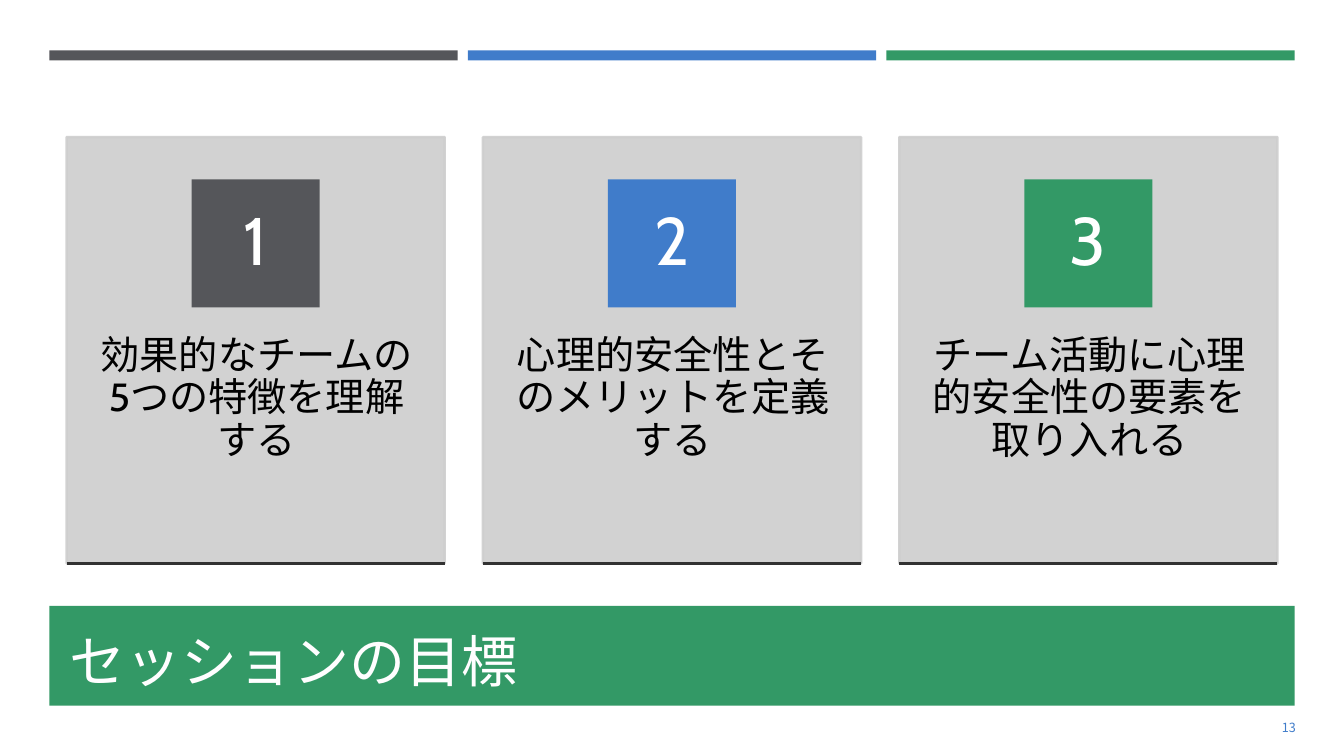
from dataclasses import dataclass

from lxml.etree import SubElement
from pptx import Presentation
from pptx.dml.color import RGBColor
from pptx.enum.shapes import MSO_CONNECTOR, MSO_SHAPE
from pptx.enum.text import MSO_ANCHOR, PP_ALIGN
from pptx.oxml.ns import qn
from pptx.shapes.autoshape import Shape
from pptx.slide import Slide
from pptx.util import Inches, Pt

COLORS = {
    "gray": "55565A",
    "blue": "407CCA",
    "green": "339966",
    "card": "CECECE",
    "rule": "323232",
    "black": "000000",
    "white": "FFFFFF",
    "title": "FFFEFF",
}
JAPANESE = "Noto Sans CJK JP"
LATIN = "Cabin"


@dataclass(frozen=True)
class Goal:
    number: str
    text: str
    color: str


@dataclass(frozen=True)
class Box:
    left: float
    top: float
    width: float
    height: float

    def lengths(self) -> tuple:
        return tuple(Inches(v) for v in (self.left, self.top, self.width, self.height))


@dataclass(frozen=True)
class TextStyle:
    size: float
    color: str
    font: str
    frame: dict
    paragraph: dict


GOALS = [
    Goal("1", "効果的なチームの5つの特徴を理解する", "gray"),
    Goal("2", "心理的安全性とそのメリットを定義する", "blue"),
    Goal("3", "チーム活動に心理的安全性の要素を取り入れる", "green"),
]

CENTERED = {"alignment": PP_ALIGN.CENTER, "line_spacing": 0.9}
MIDDLE = {"word_wrap": True, "vertical_anchor": MSO_ANCHOR.MIDDLE}
TITLE = TextStyle(40, "title", JAPANESE, MIDDLE, {"alignment": PP_ALIGN.LEFT})
PAGE_NUMBER = TextStyle(9, "blue", JAPANESE, MIDDLE, {"alignment": PP_ALIGN.RIGHT})
NUMBER = TextStyle(
    48, "white", LATIN,
    MIDDLE | {"margin_top": Inches(0.01), "margin_bottom": Inches(0.01)},
    CENTERED,
)
GOAL_TEXT = TextStyle(
    28, "black", LATIN,
    {
        "word_wrap": True,
        "vertical_anchor": MSO_ANCHOR.TOP,
        "margin_left": Inches(0.31),
        "margin_top": Inches(0.36),
        "margin_right": Inches(0.29),
        "margin_bottom": Inches(0.36),
    },
    CENTERED,
)


def rgb(name: str) -> RGBColor:
    return RGBColor.from_string(COLORS[name])


def add_rectangle(slide: Slide, box: Box, color: str) -> Shape:
    rectangle = slide.shapes.add_shape(MSO_SHAPE.RECTANGLE, *box.lengths())
    rectangle.shadow.inherit = False
    rectangle.fill.solid()
    rectangle.fill.fore_color.rgb = rgb(color)
    rectangle.line.fill.background()
    return rectangle


def write(shape: Shape, text: str, style: TextStyle) -> None:
    frame = shape.text_frame
    for name, value in style.frame.items():
        setattr(frame, name, value)
    paragraph = frame.paragraphs[0]
    for name, value in style.paragraph.items():
        setattr(paragraph, name, value)
    run = paragraph.add_run()
    run.text = text
    font = {"size": Pt(style.size), "name": style.font}
    for name, value in font.items():
        setattr(run.font, name, value)
    run.font.color.rgb = rgb(style.color)
    east_asian = SubElement(run.font._element, qn("a:ea"))
    east_asian.set("typeface", JAPANESE)


def add_text(slide: Slide, box: Box, text: str, style: TextStyle) -> None:
    write(slide.shapes.add_textbox(*box.lengths()), text, style)


def add_card(slide: Slide, left: float, goal: Goal) -> None:
    width, top, bottom = 3.75, 1.36, 5.59
    card = add_rectangle(slide, Box(left, top, width, bottom - top), "card")
    card.line.color.rgb = rgb("card")
    card.line.width = Pt(1.75)
    for color in card._element.spPr.iter(qn("a:srgbClr")):
        SubElement(color, qn("a:alpha")).set("val", "90000")

    add_text(slide, Box(left, 2.97, width, 2.54), goal.text, GOAL_TEXT)

    side = 1.27
    badge = Box(left + (width - side) / 2, 1.78, side, side)
    write(add_rectangle(slide, badge, goal.color), goal.number, NUMBER)

    rule = slide.shapes.add_connector(
        MSO_CONNECTOR.STRAIGHT,
        Inches(left), Inches(bottom), Inches(left + width), Inches(bottom),
    )
    rule.line.color.rgb = rgb("rule")
    rule.line.width = Pt(1.75)
    SubElement(rule._element.spPr, qn("a:effectLst"))


def main() -> None:
    presentation = Presentation()
    presentation.slide_width = Inches(13.33)
    presentation.slide_height = Inches(7.5)
    slide = presentation.slides.add_slide(presentation.slide_layouts[6])

    for index, goal in enumerate(GOALS):
        add_rectangle(slide, Box(0.49 + index * 4.15, 0.5, 4.05, 0.1), goal.color)

    add_rectangle(slide, Box(0.49, 6.01, 12.35, 0.99), "green")
    add_text(slide, Box(0.59, 6.11, 12.06, 0.87), "セッションの目標", TITLE)
    add_text(slide, Box(11.8, 7.02, 1.15, 0.4), "13", PAGE_NUMBER)

    for index, goal in enumerate(GOALS):
        add_card(slide, 0.66 + index * 4.13, goal)

    presentation.save("out.pptx")


if __name__ == "__main__":
    main()
